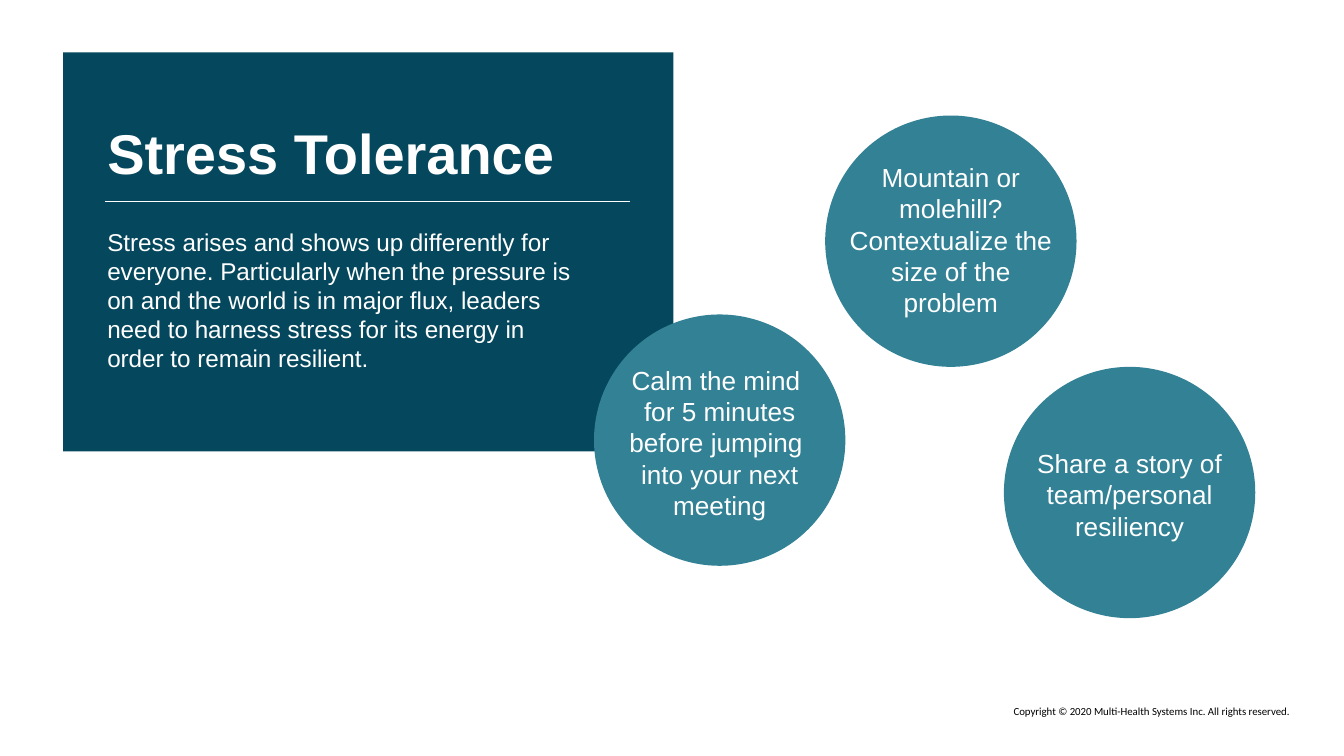
from lxml import etree
from pptx import Presentation
from pptx import util as u
from pptx.dml.color import RGBColor
from pptx.enum import shapes, text
from pptx.oxml.ns import qn

NAVY = RGBColor(0x05, 0x47, 0x5C)
TEAL = RGBColor(0x32, 0x81, 0x95)
WHITE = RGBColor(0xFF, 0xFF, 0xFF)
BLACK = RGBColor(0, 0, 0)
SIZE = 1.87


def write(slide, box, words, size=14, font="Arial", color=WHITE, bold=False,
          align=text.PP_ALIGN.LEFT, anchor=text.MSO_ANCHOR.TOP, base=None):
    """Add a wrapped text box."""
    label = slide.shapes.add_textbox(*map(u.Inches, box))
    frame = label.text_frame
    frame.word_wrap = True
    frame.vertical_anchor = anchor
    frame.text = words
    for para in frame.paragraphs:
        para.alignment = align
        for run in para.runs:
            run.font.size = u.Pt(size)
            run.font.name = font
            run.font.bold = bold
            run.font.color.rgb = color
            if base:
                run.font._element.set("baseline", str(base * 1000))


def fill(slide, kind, box, color):
    """Add a plain filled shape."""
    shape = slide.shapes.add_shape(kind, *map(u.Inches, box))
    shape.shadow.inherit = False
    shape.fill.solid()
    shape.fill.fore_color.rgb = color
    shape.line.fill.background()


def panel(slide, left, top, width, height):
    """Draw the dark panel with title, rule and summary."""
    fill(slide, shapes.MSO_SHAPE.RECTANGLE, (left, top, width, height), NAVY)
    rule = slide.shapes.add_connector(
        shapes.MSO_CONNECTOR.STRAIGHT,
        *map(u.Inches, (left + 0.31, top + 1.11, left + 4.22, top + 1.11)))
    rule.line.color.rgb = WHITE
    rule.line.width = u.Pt(0.75)
    etree.SubElement(rule._element.spPr, qn("a:effectLst"))
    write(slide, (left + 0.23, top + 0.39, 4.06, 0.7), "Stress Tolerance",
          size=30, bold=True, anchor=text.MSO_ANCHOR.MIDDLE)
    write(slide, (left + 0.23, top + 1.25, 3.67, 1.64),
          "Stress arises and shows up differently for everyone. Particularly "
          "when the pressure is on and the world is in major flux, leaders need "
          "to harness stress for its energy in order to remain resilient.",
          size=13)


def bubble(slide, left, top, words, drop, width, height):
    """Draw a circle with a centred text box that starts at the given drop."""
    fill(slide, shapes.MSO_SHAPE.OVAL, (left, top, SIZE, SIZE), TEAL)
    box = (left + (SIZE - width) / 2, top + drop, width, height)
    write(slide, box, words, align=text.PP_ALIGN.CENTER)


def main():
    """Build and save the slide."""
    deck = Presentation()
    deck.slide_width = u.Inches(10)
    deck.slide_height = deck.slide_width * 9 // 16
    slide = deck.slides.add_slide(deck.slide_layouts[6])
    panel(slide, 0.47, 0.39, 4.54, 2.97)
    write(slide, (7.03, 5.18, 2.66, 0.21),
          "Copyright © 2020 Multi-Health Systems Inc. All rights reserved.",
          size=10, font="Calibri", color=BLACK, align=text.PP_ALIGN.RIGHT,
          base=30)
    tips = [
        (6.14, 0.86, "Mountain or molehill? Contextualize the size of the "
         "problem", 0.29, 1.72, 1.28),
        (4.42, 2.34, "Calm the mind \vfor 5 minutes before jumping \n"
         "into your next meeting", 0.32, 1.88, 1.28),
        (7.47, 2.73, "Share a story of team/personal resiliency",
         0.55, 1.88, 0.81),
    ]
    for tip in tips:
        bubble(slide, *tip)
    deck.save("out.pptx")


if __name__ == "__main__":
    main()
